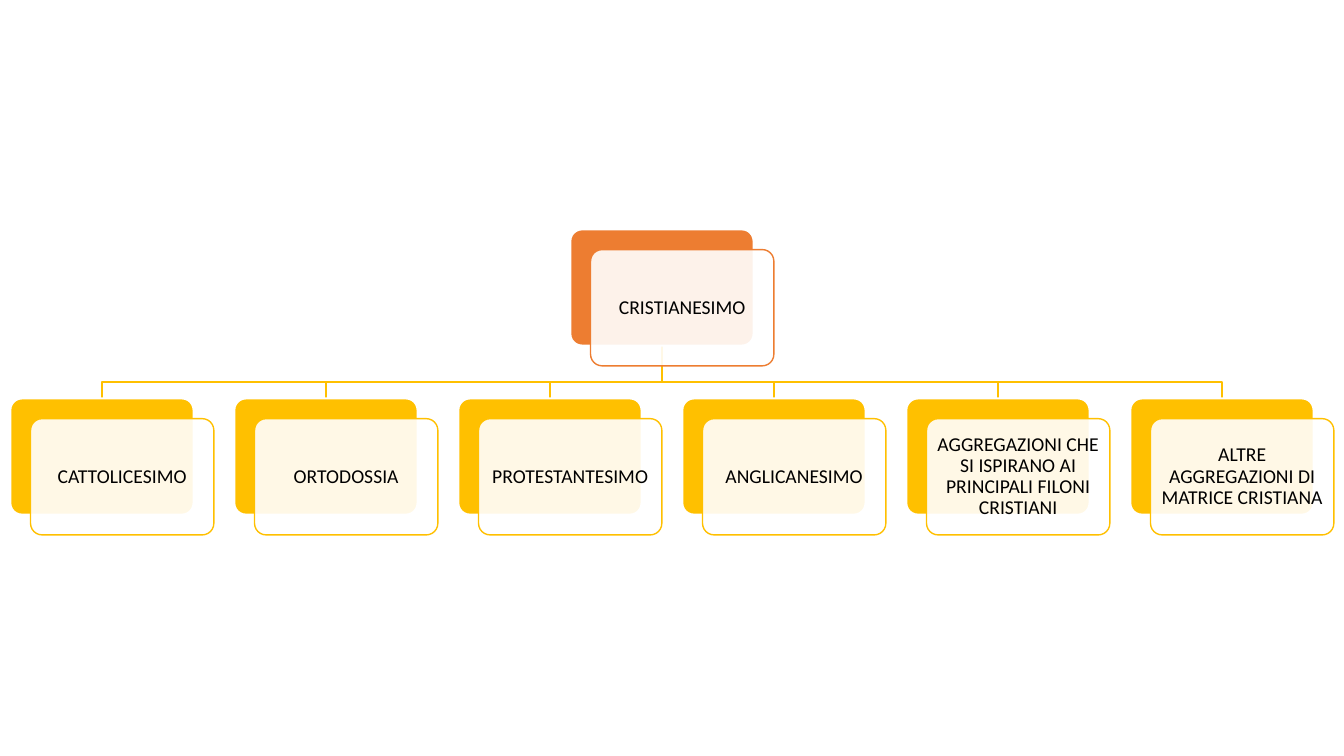
from lxml import etree
from pptx import Presentation
from pptx.dml.color import RGBColor
from pptx.enum.shapes import MSO_SHAPE
from pptx.enum.text import MSO_ANCHOR, PP_ALIGN
from pptx.oxml.ns import qn
from pptx.util import Cm, Pt

ROUND = MSO_SHAPE.ROUNDED_RECTANGLE
MIDDLE = MSO_ANCHOR.MIDDLE
CENTER = PP_ALIGN.CENTER

ORANGE, GOLD, WHITE, BLACK = "ED7D31", "FFC000", "FFFFFF", "000000"

# Sizes in centimetres
LEFT, PITCH = 0.26, 5.645
WIDTH, HEIGHT, SHIFT = 4.62, 2.93, 0.51
TOP, BEND, ROW = 5.78, 9.63, 10.04

ROOT = "CRISTIANESIMO"
LEAVES = [
    "CATTOLICESIMO",
    "ORTODOSSIA",
    "PROTESTANTESIMO",
    "ANGLICANESIMO",
    "AGGREGAZIONI CHE SI ISPIRANO AI PRINCIPALI FILONI CRISTIANI",
    "ALTRE AGGREGAZIONI DI MATRICE CRISTIANA",
]


def color(code):
    return RGBColor.from_string(code)


def write(shape, text, size=14, font="Calibri", ink=BLACK, inset=0.16):
    frame = shape.text_frame
    frame.word_wrap = True
    frame.vertical_anchor = MIDDLE
    frame.margin_left = frame.margin_right = Cm(inset)
    frame.margin_top = frame.margin_bottom = Cm(inset)
    para = frame.paragraphs[0]
    para.alignment = CENTER
    para.line_spacing = 0.9
    run = para.add_run()
    run.text = text
    run.font.size = Pt(size)
    run.font.name = font
    run.font.color.rgb = color(ink)


class Chart:
    def __init__(self, slide):
        self.shapes = slide.shapes

    def edge(self, shape, line, weight):
        shape.shadow.inherit = False
        shape.line.color.rgb = color(line)
        shape.line.width = Pt(weight)

    def plate(self, x, y, fill, line, weight, alpha=None):
        shape = self.shapes.add_shape(ROUND, Cm(x), Cm(y), Cm(WIDTH), Cm(HEIGHT))
        shape.adjustments[0] = 0.1
        shape.fill.solid()
        shape.fill.fore_color.rgb = color(fill)
        self.edge(shape, line, weight)
        if alpha is not None:
            tint = shape.fill._xPr.find(qn("a:solidFill"))[0]
            etree.SubElement(tint, qn("a:alpha"), val=str(alpha * 1000))
        return shape

    def card(self, x, y, text, hue):
        self.plate(x, y, hue, WHITE, 1.5)
        front = self.plate(x + SHIFT, y + SHIFT, WHITE, hue, 1, alpha=90)
        write(front, text)

    def branch(self, start, end):
        points = [(start, BEND), (end, BEND), (end, ROW)]
        path = self.shapes.build_freeform(Cm(start), Cm(TOP + HEIGHT))
        path.add_line_segments([(Cm(x), Cm(y)) for x, y in points], close=False)
        shape = path.convert_to_shape()
        shape.fill.background()
        self.edge(shape, GOLD, 1)


def main():
    deck = Presentation()
    deck.slide_width, deck.slide_height = Cm(33.87), Cm(19.05)
    chart = Chart(deck.slides.add_slide(deck.slide_layouts[6]))

    spots = [LEFT + i * PITCH for i in range(len(LEAVES))]
    mid = (spots[0] + spots[-1]) / 2

    # Branches lie behind the cards
    for x in reversed(spots):
        chart.branch(mid + WIDTH / 2, x + WIDTH / 2)

    # Root and its row of leaves
    chart.card(mid, TOP, ROOT, ORANGE)
    for x, text in zip(spots, LEAVES):
        chart.card(x, ROW, text, GOLD)

    deck.save("out.pptx")


if __name__ == "__main__":
    main()
